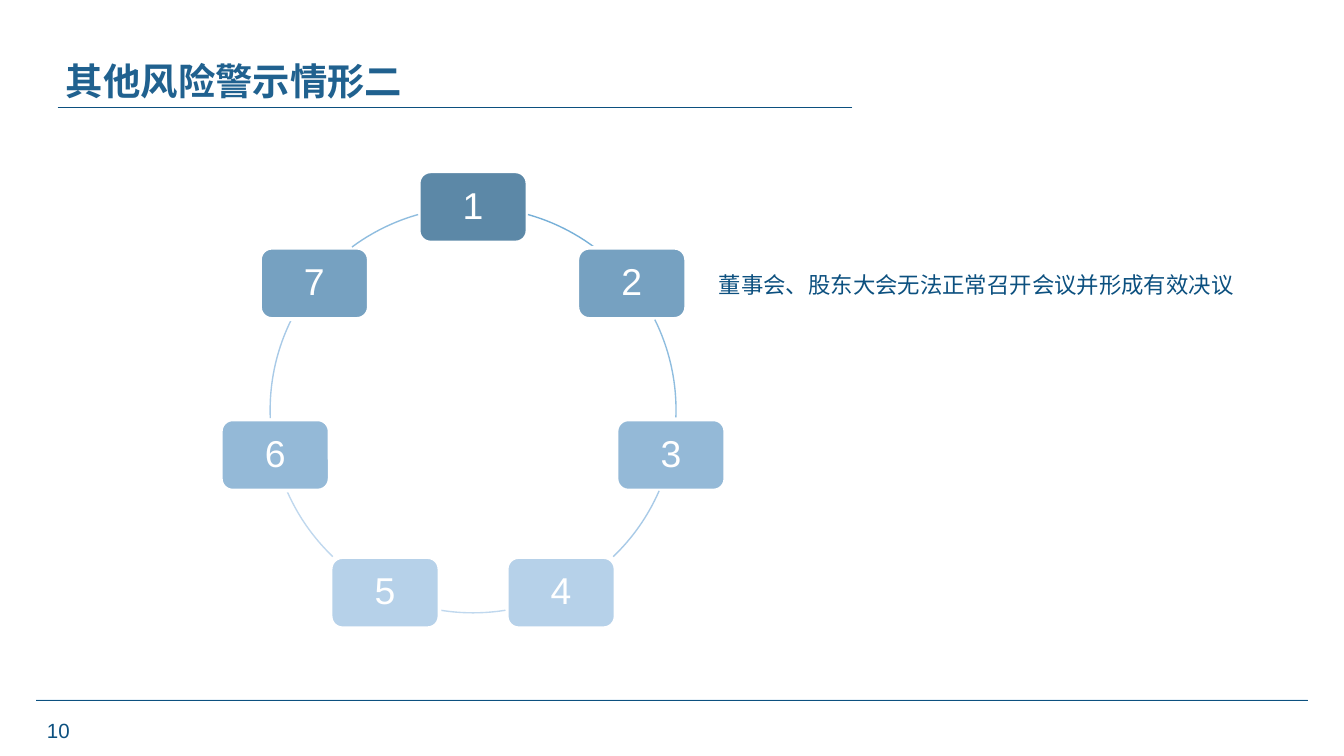
from dataclasses import dataclass
from math import cos, radians, sin

from lxml import etree
from pptx import Presentation
from pptx.dml.color import RGBColor
from pptx.enum.shapes import MSO_CONNECTOR, MSO_SHAPE
from pptx.enum.text import MSO_ANCHOR, MSO_AUTO_SIZE, PP_ALIGN
from pptx.oxml.ns import qn
from pptx.slide import Slide
from pptx.text.text import TextFrame
from pptx.util import Inches, Pt

STRAIGHT = MSO_CONNECTOR.STRAIGHT
ROUNDED_RECTANGLE = MSO_SHAPE.ROUNDED_RECTANGLE
ARC = MSO_SHAPE.ARC
LEFT, CENTER = PP_ALIGN.LEFT, PP_ALIGN.CENTER
TOP, MIDDLE = MSO_ANCHOR.TOP, MSO_ANCHOR.MIDDLE
NO_AUTO_SIZE = MSO_AUTO_SIZE.NONE

LATIN_FONT = "Arial"
CHINESE_FONT = "Noto Sans CJK SC"
COLORS = {
    "title": "20618F",
    "navy": "0C507F",
    "rule_shadow": "7DB8E2",
    "white": "FFFFFF",
    "node_1": "5C88A7",
    "node_2": "76A1C1",
    "node_3": "94B9D7",
    "node_4": "B6D1E9",
    "arc_1": "77B0D8",
    "arc_2": "8FBDDF",
    "arc_3": "A8CAE7",
    "arc_4": "C0D8EE",
}

CENTER_X, CENTER_Y, RADIUS = 3.52, 3.05, 1.51
NODE_WIDTH, NODE_HEIGHT = 0.81, 0.53


@dataclass(frozen=True)
class RingStep:
    """A numbered node and the arc to the next one, in degrees clockwise from the top."""

    node_color: str
    arc_color: str
    arc_start: float
    arc_end: float


RING = [
    RingStep("node_1", "arc_1", 15.7, 36.6),
    RingStep("node_2", "arc_2", 63.6, 92.3),
    RingStep("node_3", "arc_3", 113.5, 136.3),
    RingStep("node_4", "arc_4", 170.8, 189.2),
    RingStep("node_4", "arc_4", 223.7, 246.5),
    RingStep("node_3", "arc_3", 267.7, 296.4),
    RingStep("node_2", "arc_2", 323.4, 344.3),
]


def rgb(color: str) -> RGBColor:
    return RGBColor.from_string(COLORS[color])


def write(frame: TextFrame, text: str, size: float, color: str, font_name: str,
          bold: bool = False, alignment: PP_ALIGN = LEFT,
          anchor: MSO_ANCHOR = TOP, line_spacing: float = 1.0) -> None:
    frame.word_wrap = True
    frame.auto_size = NO_AUTO_SIZE
    frame.vertical_anchor = anchor
    frame.text = text
    paragraph = frame.paragraphs[0]
    paragraph.alignment = alignment
    paragraph.line_spacing = line_spacing
    font = paragraph.font
    font.size = Pt(size)
    font.bold = bold
    font.color.rgb = rgb(color)
    font.name = font_name
    properties = paragraph._p.pPr.find(qn("a:defRPr"))
    etree.SubElement(properties, qn("a:ea")).set("typeface", font_name)


def add_rule(slide: Slide, left: float, right: float, top: float) -> None:
    """Draw a horizontal line with a half-transparent shadow right beneath it."""
    rule = slide.shapes.add_connector(
        STRAIGHT, Inches(left), Inches(top), Inches(right), Inches(top))
    rule.line.color.rgb = rgb("navy")
    rule.line.width = Pt(0.5)
    effects = etree.SubElement(rule._element.spPr, qn("a:effectLst"))
    shadow = etree.SubElement(effects, qn("a:outerShdw"), blurRad="0", dist="0", dir="0")
    color = etree.SubElement(shadow, qn("a:srgbClr"), val=COLORS["rule_shadow"])
    etree.SubElement(color, qn("a:alpha"), val="50000")


def add_text_box(slide: Slide, left: float, top: float, width: float,
                 height: float) -> TextFrame:
    return slide.shapes.add_textbox(
        Inches(left), Inches(top), Inches(width), Inches(height)).text_frame


def add_node(slide: Slide, number: int, step: RingStep) -> None:
    angle = radians(360 / len(RING) * (number - 1))
    left = CENTER_X + RADIUS * sin(angle) - NODE_WIDTH / 2
    top = CENTER_Y - RADIUS * cos(angle) - NODE_HEIGHT / 2
    node = slide.shapes.add_shape(
        ROUNDED_RECTANGLE, Inches(left), Inches(top),
        Inches(NODE_WIDTH), Inches(NODE_HEIGHT))
    node.shadow.inherit = False
    node.fill.solid()
    node.fill.fore_color.rgb = rgb(step.node_color)
    node.line.color.rgb = rgb("white")
    node.line.width = Pt(2)
    write(node.text_frame, str(number), 20, "white", LATIN_FONT,
          alignment=CENTER, anchor=MIDDLE, line_spacing=0.9)


def arc_adjustment(angle: float) -> float:
    """Turn degrees from the top into the arc preset's scale, which starts at the right."""
    return (angle - 90) % 360 * 0.6


def add_arc(slide: Slide, step: RingStep) -> None:
    arc = slide.shapes.add_shape(
        ARC, Inches(CENTER_X - RADIUS), Inches(CENTER_Y - RADIUS),
        Inches(2 * RADIUS), Inches(2 * RADIUS))
    arc.shadow.inherit = False
    arc.adjustments[0] = arc_adjustment(step.arc_start)
    arc.adjustments[1] = arc_adjustment(step.arc_end)
    arc.fill.background()
    arc.line.color.rgb = rgb(step.arc_color)
    arc.line.width = Pt(0.75)


def main() -> None:
    presentation = Presentation()
    presentation.slide_width = Inches(10)
    presentation.slide_height = Inches(10 * 9 / 16)
    slide = presentation.slides.add_slide(presentation.slide_layouts[5])

    add_rule(slide, 0.27, 9.73, 5.21)
    add_rule(slide, 0.43, 6.34, 0.8)

    title = slide.shapes.title
    title.left, title.top = Inches(0.39), Inches(0.38)
    title.width, title.height = Inches(6.33), Inches(0.44)
    write(title.text_frame, "其他风险警示情形二", 20, "title", CHINESE_FONT, bold=True)

    write(add_text_box(slide, 0.2, 5.29, 0.47, 0.24), "10", 11, "navy",
          LATIN_FONT, alignment=CENTER)

    for number, step in enumerate(RING, start=1):
        add_node(slide, number, step)
        add_arc(slide, step)

    write(add_text_box(slide, 5.25, 1.97, 4.33, 0.3),
          "董事会、股东大会无法正常召开会议并形成有效决议", 12, "navy", CHINESE_FONT)

    presentation.save("out.pptx")


if __name__ == "__main__":
    main()
